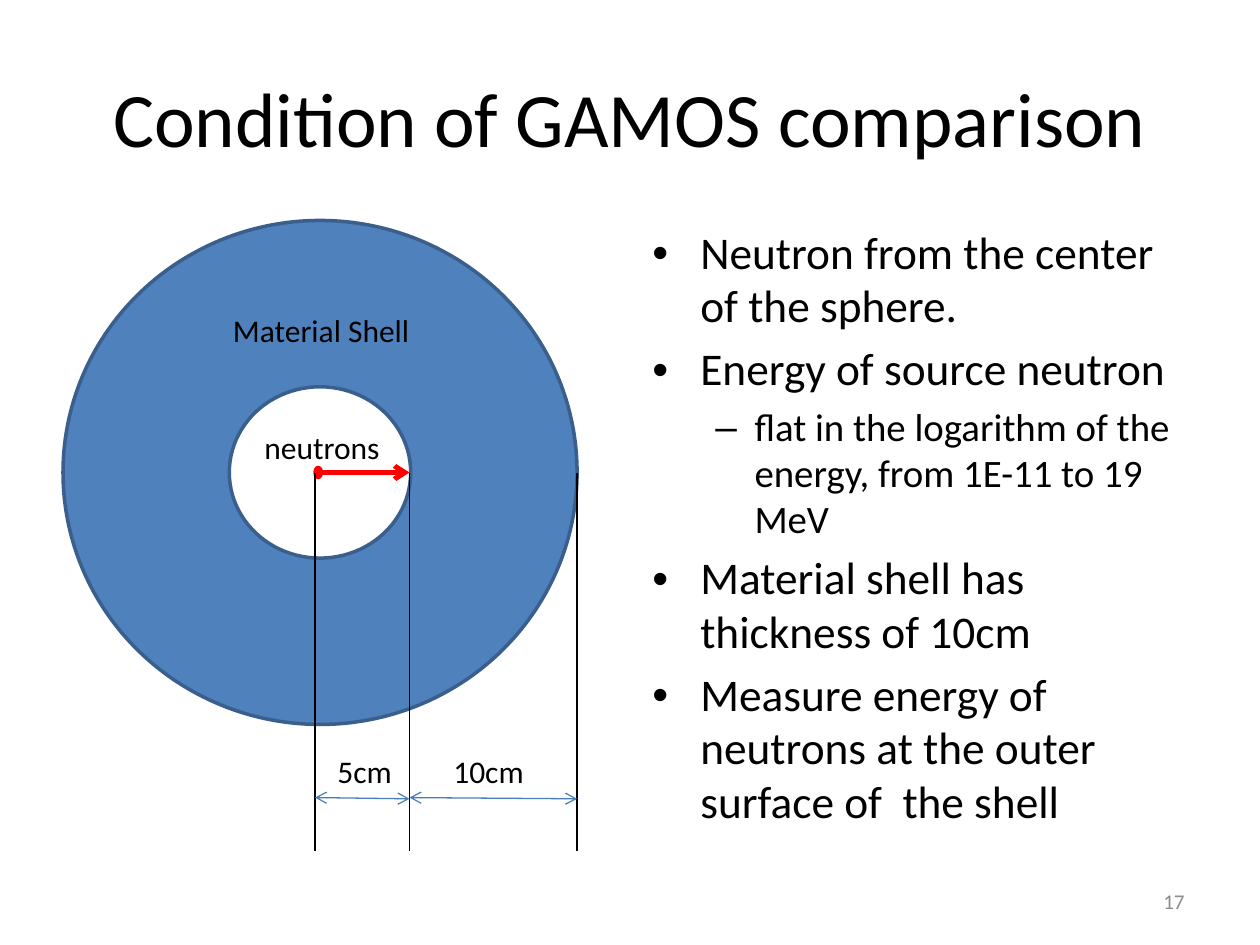
from lxml.etree import SubElement
from pptx import Presentation
from pptx.dml.color import RGBColor
from pptx.enum.shapes import MSO_CONNECTOR, MSO_SHAPE
from pptx.enum.text import MSO_ANCHOR, PP_ALIGN
from pptx.oxml.ns import qn
from pptx.util import Inches, Pt

presentation = Presentation()
presentation.slide_width, presentation.slide_height = Inches(10), Inches(7.5)
slide = presentation.slides.add_slide(presentation.slide_layouts[6])


def add_text(text, left, top, width, height, size=18, color="000000",
             align=PP_ALIGN.LEFT, anchor=MSO_ANCHOR.TOP, wrap=True):
    box = slide.shapes.add_textbox(*map(Inches, (left, top, width, height)))
    frame = box.text_frame
    frame.word_wrap, frame.vertical_anchor = wrap, anchor
    paragraph = frame.paragraphs[0]
    paragraph.text, paragraph.alignment = text, align
    font = paragraph.runs[0].font
    font.name, font.size = "Calibri", Pt(size)
    font.color.rgb = RGBColor.from_string(color)
    return frame


def add_line(start, end, color, width, arrows=()):
    line = slide.shapes.add_connector(
        MSO_CONNECTOR.STRAIGHT, *map(Inches, (*start, *end)))
    line.line.color.rgb = RGBColor.from_string(color)
    line.line.width = Pt(width)
    properties = line._element.spPr
    for end_tag in arrows:
        SubElement(properties.find(qn("a:ln")), qn(end_tag), type="arrow")
    SubElement(properties, qn("a:effectLst"))


# Title and page number
add_text("Condition of GAMOS comparison", 0.5, 0.3, 9, 1.25, size=44,
         align=PP_ALIGN.CENTER, anchor=MSO_ANCHOR.MIDDLE)
add_text("17", 7.17, 6.95, 2.33, 0.4, size=12, color="8C8C8C",
         align=PP_ALIGN.RIGHT, anchor=MSO_ANCHOR.MIDDLE)

# Bulleted conditions: text and outline level
conditions = [
    ("Neutron from the center of the sphere.", 0),
    ("Energy of source neutron", 0),
    ("flat in the logarithm of the energy, from 1E-11 to 19 MeV", 1),
    ("Material shell has thickness of 10cm", 0),
    ("Measure energy of neutrons at the outer surface of  the shell", 0),
]
level_styles = [("•", 25.9, 0.38, 0.38), ("–", 22.2, 0.81, 0.31)]
body = add_text(conditions[0][0], 5.08, 1.75, 4.42, 4.95, size=25.9)
for index, (text, level) in enumerate(conditions):
    bullet, size, margin, hanging = level_styles[level]
    paragraph = body.add_paragraph() if index else body.paragraphs[0]
    paragraph.text, paragraph.level = text, level
    paragraph.line_spacing = 0.98
    paragraph.space_before = Pt(0.22 * size if index else 0)
    properties = paragraph._p.get_or_add_pPr()
    properties.set("marL", str(Inches(margin)))
    properties.set("indent", str(-Inches(hanging)))
    SubElement(properties, qn("a:buFont"), typeface="Arial")
    SubElement(properties, qn("a:buChar"), char=bullet)
    font = paragraph.runs[0].font
    font.name, font.size = "Calibri", Pt(size)
    font.color.rgb = RGBColor.from_string("000000")

# Sphere geometry
center_x, inner_x, outer_x = 2.5, 3.25, 4.58
center_y, guide_bottom, dimension_y = 3.75, 6.75, 6.33

# Material shell and neutron source
for kind, box, fill, outline in [
    (MSO_SHAPE.DONUT, (0.5, 1.75, 4.08, 4), "4F81BD", "3A5F8C"),
    (MSO_SHAPE.OVAL, (center_x, 3.71, 0.05, 0.08), "FF0000", "FF0000"),
]:
    shape = slide.shapes.add_shape(kind, *map(Inches, box))
    shape.shadow.inherit = False
    shape.fill.solid()
    shape.fill.fore_color.rgb = RGBColor.from_string(fill)
    shape.line.color.rgb = RGBColor.from_string(outline)
    shape.line.width = Pt(2)
    if kind == MSO_SHAPE.DONUT:
        shape.adjustments[0] = 0.33

# Neutron direction
add_line((center_x + 0.05, center_y), (inner_x, center_y), "FF0000", 2.75,
         arrows=["a:tailEnd"])

# Radius guides and dimension arrows
for x in (center_x, inner_x, outer_x):
    add_line((x, center_y), (x, guide_bottom), "000000", 0.75)
for left, right in [(center_x, inner_x), (inner_x, outer_x)]:
    add_line((left, dimension_y), (right, dimension_y + 0.01), "4B7EBC", 0.75,
             arrows=["a:headEnd", "a:tailEnd"])

# Labels
for text, left, top, width in [
    ("5cm", 2.58, 5.92, 0.64),
    ("10cm", 3.5, 5.92, 0.77),
    ("Material Shell", 1.75, 2.42, 1.62),
    ("neutrons", 2, 3.35, 1.13),
]:
    add_text(text, left, top, width, 0.4, wrap=False)

presentation.save("out.pptx")
